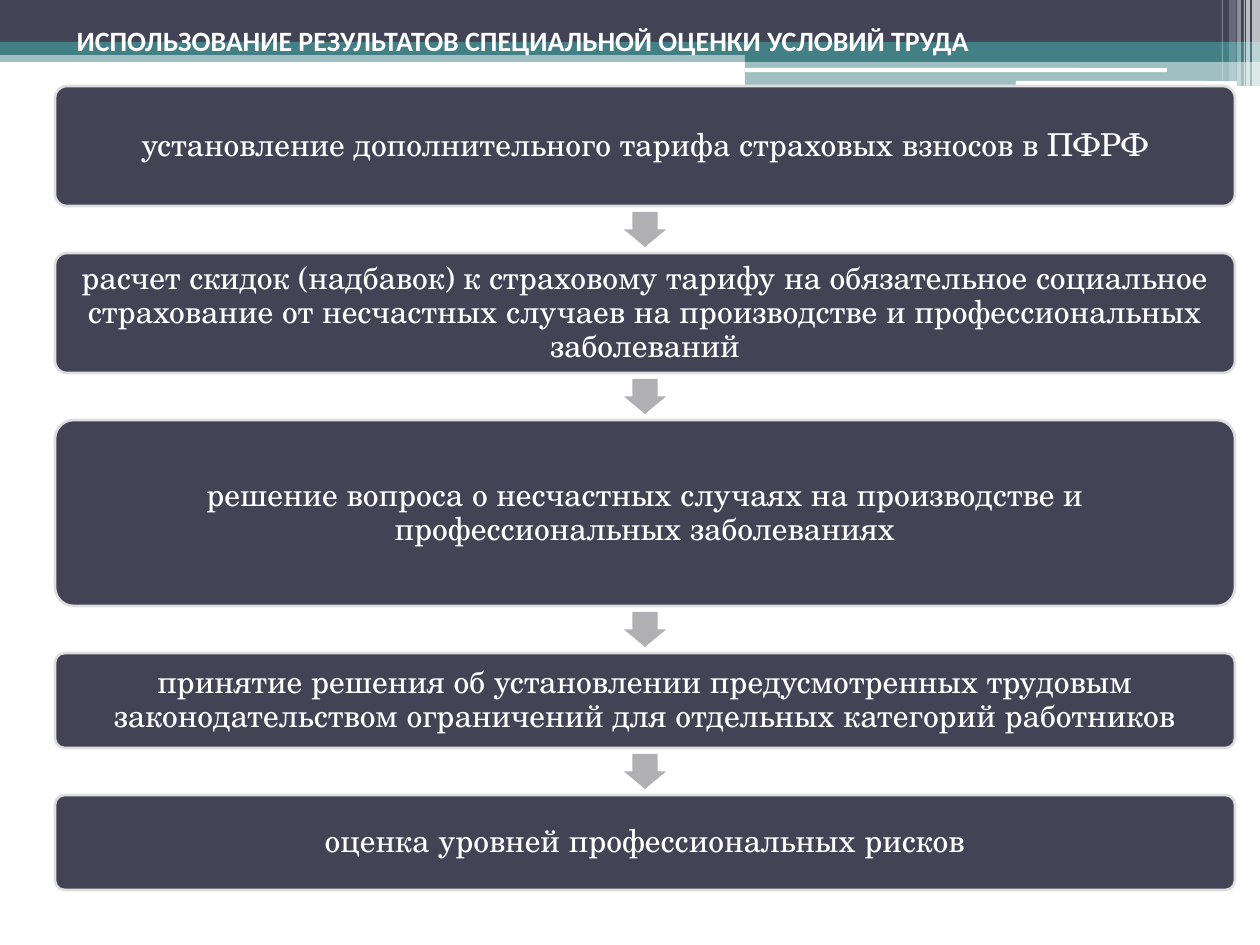
from dataclasses import dataclass

from lxml import etree
from pptx import Presentation
from pptx.dml.color import RGBColor
from pptx.enum.shapes import MSO_SHAPE
from pptx.enum.text import MSO_ANCHOR, MSO_AUTO_SIZE, PP_ALIGN
from pptx.oxml.ns import qn
from pptx.shapes.autoshape import Shape
from pptx.slide import Slide
from pptx.text.text import TextFrame
from pptx.util import Emu, Pt

RECT = MSO_SHAPE.RECTANGLE
ROUNDED = MSO_SHAPE.ROUNDED_RECTANGLE
DOWN_ARROW = MSO_SHAPE.DOWN_ARROW
MIDDLE = MSO_ANCHOR.MIDDLE
NO_AUTOFIT = MSO_AUTO_SIZE.NONE
LEFT = PP_ALIGN.LEFT
CENTER = PP_ALIGN.CENTER

NAVY = RGBColor(0x42, 0x44, 0x56)
TEAL = RGBColor(0x43, 0x80, 0x86)
WHITE = RGBColor(0xFF, 0xFF, 0xFF)
OUTLINE = RGBColor(0xDE, 0xDE, 0xDE)
ARROW_GRAY = RGBColor(0xB0, 0xB0, 0xB4)

TITLE_FONT = "Calibri"
STEP_FONT = "TeX Gyre Schola"
EMU_PER_PX = 914400 / 126

STEP_LEFT, STEP_WIDTH, FIRST_TOP = 55, 1180, 86
STEP_GAP, STEP_MARGIN = 47, 9
ARROW_WIDTH, ARROW_HEIGHT = 42, 35


@dataclass(frozen=True)
class Box:
    left: int
    top: int
    width: int
    height: int


@dataclass(frozen=True)
class Band:
    box: Box
    color: RGBColor
    opacity: int = 100
    kind: MSO_SHAPE = RECT


@dataclass(frozen=True)
class Step:
    text: str
    height: int


BANDS = [
    Band(Box(0, 50, 1260, 12), TEAL, 50),
    Band(Box(0, 0, 1260, 43), NAVY),
    Band(Box(0, 42, 1260, 13), TEAL),
    Band(Box(745, 49, 515, 13), TEAL),
    Band(Box(745, 61, 515, 25), TEAL, 50),
    Band(Box(745, 68, 422, 4), WHITE, kind=ROUNDED),
    Band(Box(1016, 81, 221, 5), WHITE, kind=ROUNDED),
    Band(Box(1252, 0, 8, 86), WHITE, 65),
    Band(Box(1246, 0, 4, 86), WHITE, 65),
    Band(Box(1244, 0, 1, 86), WHITE, 60),
    Band(Box(1237, 0, 4, 86), WHITE, 40),
    Band(Box(1229, 0, 7, 81), WHITE, 20),
    Band(Box(1222, 0, 1, 81), WHITE, 30),
]

TITLE = "ИСПОЛЬЗОВАНИЕ РЕЗУЛЬТАТОВ СПЕЦИАЛЬНОЙ ОЦЕНКИ УСЛОВИЙ ТРУДА"

STEPS = [
    Step("установление дополнительного тарифа страховых взносов в ПФРФ", 120),
    Step(
        "расчет скидок (надбавок) к страховому тарифу на обязательное "
        "социальное страхование от несчастных случаев на производстве "
        "и профессиональных заболеваний",
        120,
    ),
    Step(
        "решение вопроса о несчастных случаях на производстве "
        "и профессиональных заболеваниях",
        186,
    ),
    Step(
        "принятие решения об установлении предусмотренных трудовым "
        "законодательством ограничений для отдельных категорий работников",
        95,
    ),
    Step("оценка уровней профессиональных рисков", 95),
]


def px(length: float) -> Emu:
    return Emu(round(length * EMU_PER_PX))


def add_filled(slide: Slide, kind: MSO_SHAPE, box: Box, color: RGBColor) -> Shape:
    shape = slide.shapes.add_shape(
        kind, px(box.left), px(box.top), px(box.width), px(box.height)
    )
    shape.shadow.inherit = False
    shape.fill.solid()
    shape.fill.fore_color.rgb = color
    shape.line.fill.background()
    return shape


def add_band(slide: Slide, band: Band) -> None:
    shape = add_filled(slide, band.kind, band.box, band.color)
    if band.opacity < 100:
        color = shape.fill._xPr.find(qn("a:solidFill"))[0]
        etree.SubElement(color, qn("a:alpha"), val=str(band.opacity * 1000))


def write(
    frame: TextFrame, text: str, font: str, size: int, align: PP_ALIGN, bold: bool
) -> None:
    frame.word_wrap = True
    frame.auto_size = NO_AUTOFIT
    frame.vertical_anchor = MIDDLE
    paragraph = frame.paragraphs[0]
    paragraph.alignment = align
    run = paragraph.add_run()
    run.text = text
    run.font.name = font
    run.font.size = Pt(size)
    run.font.bold = bold
    run.font.color.rgb = WHITE


def place_title(slide: Slide) -> None:
    title = slide.shapes.title
    title.left, title.top, title.width, title.height = (
        px(64), px(16), px(1134), px(49)
    )
    write(title.text_frame, TITLE, TITLE_FONT, 16, LEFT, True)
    slide.shapes._spTree.append(title._element)


def add_step(slide: Slide, step: Step, top: int) -> None:
    box = Box(STEP_LEFT, top, STEP_WIDTH, step.height)
    shape = add_filled(slide, ROUNDED, box, NAVY)
    shape.adjustments[0] = 0.1
    shape.line.color.rgb = OUTLINE
    shape.line.width = Pt(1.5)
    frame = shape.text_frame
    frame.margin_left = frame.margin_right = px(STEP_MARGIN)
    frame.margin_top = frame.margin_bottom = px(STEP_MARGIN)
    write(frame, step.text, STEP_FONT, 18, CENTER, False)
    frame.paragraphs[0].line_spacing = 0.9


def add_arrow(slide: Slide, gap_top: int) -> None:
    left = STEP_LEFT + (STEP_WIDTH - ARROW_WIDTH) // 2
    top = gap_top + (STEP_GAP - ARROW_HEIGHT) // 2
    box = Box(left, top, ARROW_WIDTH, ARROW_HEIGHT)
    arrow = add_filled(slide, DOWN_ARROW, box, ARROW_GRAY)
    arrow.adjustments[0] = 0.6
    arrow.adjustments[1] = 0.5


def main() -> None:
    deck = Presentation()
    deck.slide_width, deck.slide_height = px(1260), px(945)
    slide = deck.slides.add_slide(deck.slide_layouts[5])
    for band in BANDS:
        add_band(slide, band)
    place_title(slide)
    top = FIRST_TOP
    for step in STEPS:
        if top > FIRST_TOP:
            add_arrow(slide, top - STEP_GAP)
        add_step(slide, step, top)
        top += step.height + STEP_GAP
    deck.save("out.pptx")


if __name__ == "__main__":
    main()
